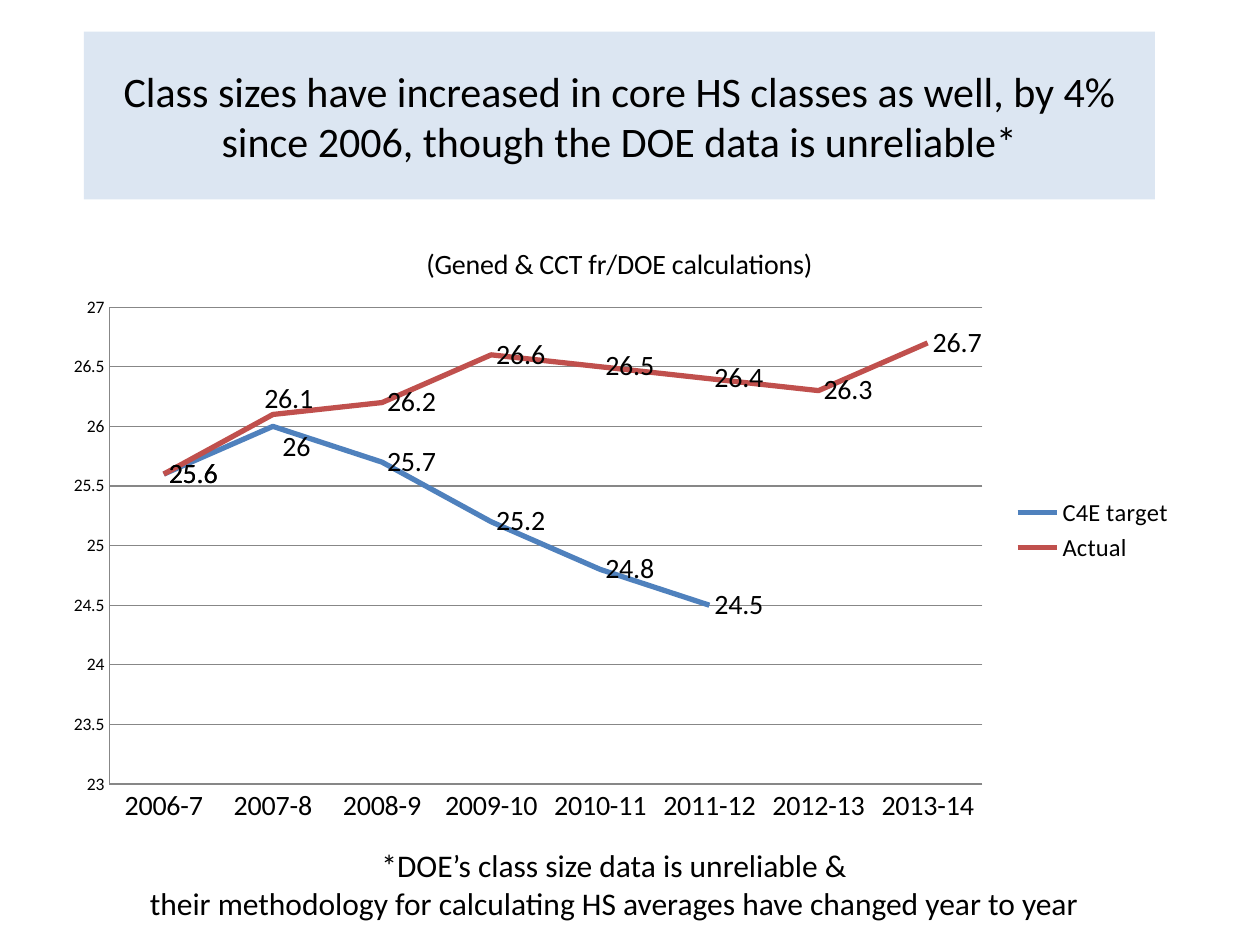
from lxml import etree
from pptx import Presentation
from pptx.chart.data import CategoryChartData
from pptx.dml.color import RGBColor
from pptx.enum.chart import XL_CHART_TYPE, XL_LABEL_POSITION as LabelPos
from pptx.enum.chart import XL_LEGEND_POSITION, XL_TICK_MARK
from pptx.enum.shapes import MSO_SHAPE
from pptx.enum.text import MSO_ANCHOR, PP_ALIGN
from pptx.oxml.ns import qn
from pptx.util import Pt

COLORS = {
    "text": "000000",
    "banner": "DCE6F2",
    "target": "4F81BD",
    "actual": "C0504D",
    "grid": "878787",
}
YEARS = ["2006-7", "2007-8", "2008-9", "2009-10",
         "2010-11", "2011-12", "2012-13", "2013-14"]
# name, color, values, shift of the 2007-8 label as a share of the chart
CLASS_SIZES = [
    ("C4E target", "target",
     [25.6, 26, 25.7, 25.2, 24.8, 24.5, None, None], {"x": 0.004, "y": 0.034}),
    ("Actual", "actual",
     [25.6, 26.1, 26.2, 26.6, 26.5, 26.4, 26.3, 26.7], {"x": -0.012, "y": -0.024}),
]
PLOT_AREA = {"layoutTarget": "inner", "xMode": "edge", "yMode": "edge",
             "x": 0.05, "y": 0.14, "w": 0.77, "h": 0.77}


def rgb(name):
    return RGBColor.from_string(COLORS[name])


def set_layout(parent, settings, index):
    """Give a chart part a manual layout, placed as child number index."""
    for old in parent.findall(qn("c:layout")):
        parent.remove(old)
    layout = etree.Element(qn("c:layout"))
    manual = etree.SubElement(layout, qn("c:manualLayout"))
    for tag, value in settings.items():
        etree.SubElement(manual, qn(f"c:{tag}")).set("val", str(value))
    parent.insert(index, layout)


class SlideBuilder:
    def __init__(self, slide, font="Calibri"):
        self.slide = slide
        self.font = font

    def style(self, font, size):
        font.name = self.font
        font.size = Pt(size)
        font.bold = False
        font.color.rgb = rgb("text")

    def fill_text(self, frame, lines, size):
        frame.word_wrap = True
        frame.text = "\n".join(lines)
        for paragraph in frame.paragraphs:
            paragraph.alignment = PP_ALIGN.CENTER
            for run in paragraph.runs:
                self.style(run.font, size)

    def banner(self, box, text, size):
        banner = self.slide.shapes.add_shape(MSO_SHAPE.RECTANGLE, *map(Pt, box))
        banner.shadow.inherit = False
        banner.fill.solid()
        banner.fill.fore_color.rgb = rgb("banner")
        banner.line.fill.background()
        banner.text_frame.vertical_anchor = MSO_ANCHOR.MIDDLE
        self.fill_text(banner.text_frame, [text], size)

    def note(self, box, lines, size):
        note = self.slide.shapes.add_textbox(*map(Pt, box))
        self.fill_text(note.text_frame, lines, size)

    def line_chart(self, box, title):
        data = CategoryChartData()
        data.categories = YEARS
        for name, _, values, _ in CLASS_SIZES:
            data.add_series(name, values)
        chart = self.slide.shapes.add_chart(
            XL_CHART_TYPE.LINE, *map(Pt, box), data).chart
        self.style(chart.font, 10)

        chart.has_title = True
        heading = chart.chart_title
        heading.include_in_layout = False
        heading.text_frame.text = title
        self.style(heading.text_frame.paragraphs[0].runs[0].font, 16)
        chart.has_legend = True
        chart.legend.position = XL_LEGEND_POSITION.RIGHT
        chart.legend.include_in_layout = False
        self.style(chart.legend.font, 14)

        self.axes(chart)
        plot = chart.plots[0]
        plot.vary_by_categories = False
        for series, (_, color, _, shift) in zip(plot.series, CLASS_SIZES):
            self.series(series, color, shift)
        set_layout(chart._chartSpace.chart.plotArea, PLOT_AREA, 0)

    def axes(self, chart):
        years, sizes = chart.category_axis, chart.value_axis
        sizes.minimum_scale, sizes.maximum_scale = 23, 27
        sizes.major_unit = 0.5
        sizes.has_major_gridlines = True
        for axis, size in ((years, 16), (sizes, 10)):
            axis.major_tick_mark = XL_TICK_MARK.NONE
            axis.minor_tick_mark = XL_TICK_MARK.NONE
            self.style(axis.tick_labels.font, size)
        for part in (years, sizes, sizes.major_gridlines):
            part.format.line.color.rgb = rgb("grid")
            part.format.line.width = Pt(0.75)

    def series(self, series, color, shift):
        series.smooth = False
        series.format.line.color.rgb = rgb(color)
        series.format.line.width = Pt(3)
        labels = series.data_labels
        labels.show_value = True
        labels.position = LabelPos.RIGHT
        self.style(labels.font, 16)

        moved = series.points[1].data_label
        self.style(moved.font, 16)
        moved.position = LabelPos.RIGHT
        label = labels._element.find(qn("c:dLbl"))
        set_layout(label, shift, 1)


def main():
    deck = Presentation()
    deck.slide_width, deck.slide_height = Pt(720), Pt(540)
    builder = SlideBuilder(deck.slides.add_slide(deck.slide_layouts[6]))
    builder.banner(
        (48, 18, 612, 96),
        "Class sizes have increased in core HS classes as well, by 4% "
        "since 2006, though the DOE data is unreliable*", 24)
    builder.line_chart((30, 126, 648, 354), "(Gened & CCT fr/DOE calculations)")
    builder.note(
        (66, 480, 570, 51),
        ["*DOE’s class size data is unreliable &",
         "their methodology for calculating HS averages have changed year to year"],
        18)
    deck.save("out.pptx")


if __name__ == "__main__":
    main()
